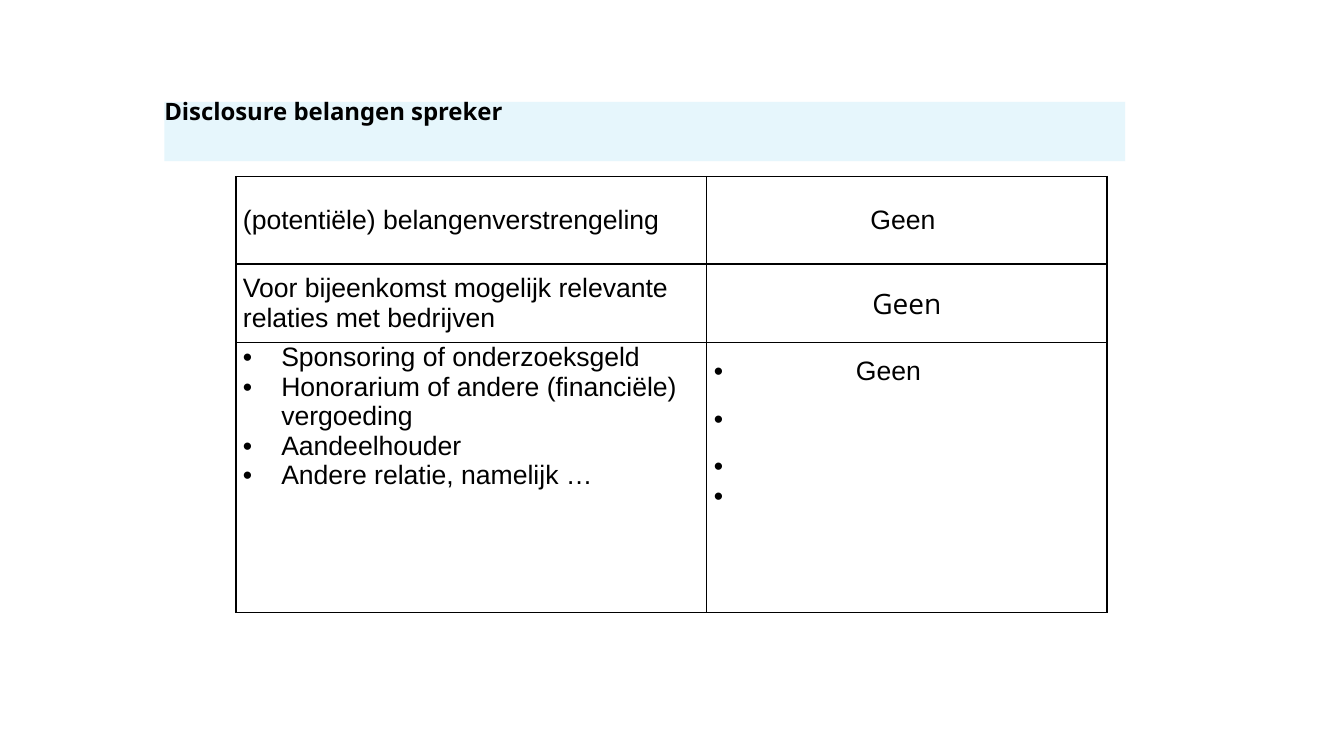
"""Build the speaker disclosure slide."""
from lxml.etree import SubElement
from pptx import Presentation
from pptx.dml.color import RGBColor
from pptx.enum.shapes import MSO_SHAPE
from pptx.enum.text import MSO_ANCHOR, PP_ALIGN
from pptx.oxml.ns import qn
from pptx.util import Inches, Pt

BLACK = RGBColor(0x00, 0x00, 0x00)
PALE_BLUE = RGBColor(0xE6, 0xF6, 0xFC)


def add_text(paragraph, text, size=19, font="Arial", bold=False):
    run = paragraph.add_run()
    run.text = text
    run.font.size = Pt(size)
    run.font.name = font
    run.font.bold = bold
    run.font.color.rgb = BLACK


def add_bullet(paragraph, indent):
    properties = paragraph._p.get_or_add_pPr()
    properties.set("marL", str(Inches(indent)))
    properties.set("indent", str(-Inches(indent)))
    SubElement(properties, qn("a:buFont"), typeface="Arial")
    SubElement(properties, qn("a:buChar"), char="•")


presentation = Presentation()
presentation.slide_width = Inches(13.33)
presentation.slide_height = Inches(7.5)
slide = presentation.slides.add_slide(presentation.slide_layouts[6])

table = slide.shapes.add_table(
    3, 2, Inches(2.34), Inches(1.75), Inches(8.64), Inches(4.33)
).table
table.first_row = False
table.horz_banding = False
for column, width in zip(table.columns, (4.67, 3.97)):
    column.width = Inches(width)
for row, height in zip(table.rows, (0.87, 0.78, 2.68)):
    row.height = Inches(height)

for cell in table.iter_cells():
    cell.margin_left = cell.margin_right = Inches(0.07)
    cell.margin_top = cell.margin_bottom = 0
    cell.vertical_anchor = MSO_ANCHOR.MIDDLE
    cell_properties = cell._tc.get_or_add_tcPr()
    for side in ("a:lnL", "a:lnR", "a:lnT", "a:lnB"):
        border = SubElement(cell_properties, qn(side), w=str(Pt(1)))
        border_fill = SubElement(border, qn("a:solidFill"))
        SubElement(border_fill, qn("a:srgbClr"), val=str(BLACK))
    cell.fill.background()

questions = (
    "(potentiële) belangenverstrengeling",
    "Voor bijeenkomst mogelijk relevante relaties met bedrijven",
)
answer_styles = ((19, "Arial"), (20, "Open Sans"))
for index, (question, (size, font)) in enumerate(zip(questions, answer_styles)):
    add_text(table.cell(index, 0).text_frame.paragraphs[0], question)
    answer = table.cell(index, 1).text_frame.paragraphs[0]
    answer.alignment = PP_ALIGN.CENTER
    add_text(answer, "Geen", size, font)
table.cell(0, 1).margin_right = Inches(0.15)

relations_cell = table.cell(2, 0)
relations_cell.vertical_anchor = MSO_ANCHOR.TOP
relations = (
    "Sponsoring of onderzoeksgeld",
    "Honorarium of andere (financiële) vergoeding",
    "Aandeelhouder",
    "Andere relatie, namelijk …",
)
for index, relation in enumerate(relations):
    frame = relations_cell.text_frame
    paragraph = frame.add_paragraph() if index else frame.paragraphs[0]
    add_bullet(paragraph, 0.38)
    add_text(paragraph, relation)

answers_cell = table.cell(2, 1)
answers_cell.vertical_anchor = MSO_ANCHOR.TOP
answers_cell.margin_top = Inches(0.14)
first_answer = answers_cell.text_frame.paragraphs[0]
add_bullet(first_answer, 1.41)
add_text(first_answer, "Geen")
for space_before in (13, 12.5, 0):
    paragraph = answers_cell.text_frame.add_paragraph()
    paragraph.space_before = Pt(space_before)
    add_text(paragraph, "•")

title = slide.shapes.add_shape(
    MSO_SHAPE.RECTANGLE, Inches(1.63), Inches(1.01), Inches(9.53), Inches(0.59)
)
title.shadow.inherit = False
title.fill.solid()
title.fill.fore_color.rgb = PALE_BLUE
title.line.fill.background()
title_frame = title.text_frame
title_frame.word_wrap = True
title_frame.vertical_anchor = MSO_ANCHOR.MIDDLE
title_frame.margin_left = title_frame.margin_right = title_frame.margin_top = 0
title_frame.margin_bottom = Inches(0.4)
title_paragraph = title_frame.paragraphs[0]
title_paragraph.alignment = PP_ALIGN.LEFT
add_text(title_paragraph, "Disclosure belangen spreker", 17.1, "Noto Sans", True)

presentation.save("out.pptx")
